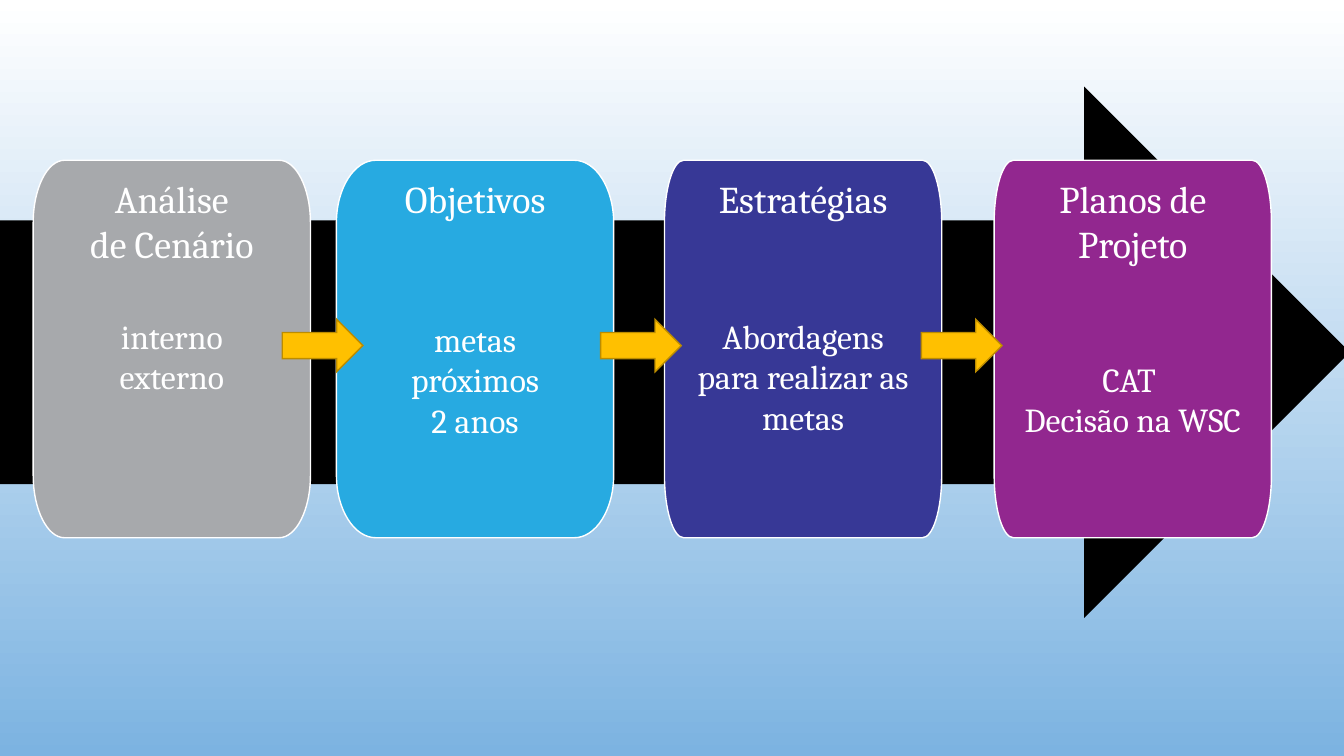
from copy import deepcopy

from lxml.etree import SubElement
from pptx import Presentation
from pptx.dml.color import RGBColor
from pptx.enum.shapes import MSO_SHAPE as Shape
from pptx.enum.text import MSO_ANCHOR as Anchor, PP_ALIGN as Align
from pptx.oxml.ns import qn
from pptx.util import Inches, Pt

WIDE, HIGH = Inches(13.33), Inches(7.5)
FONT = "Cambria"
SKY = ("FFFFFF", "7CB3E1")

CARDS = [
    dict(left=2.47, bend=2.33, fill="A7A9AC", gap=35.5,
         head=["Análise", "de Cenário"], body=["interno", "externo"]),
    dict(left=25.03, bend=2.93, fill="27AAE1", gap=70,
         head=["Objetivos"], body=["metas", "próximos", "2 anos"]),
    dict(left=49.44, bend=1.43, fill="373896", gap=68,
         head=["Estratégias"], body=["Abordagens", "para realizar as metas"]),
    dict(left=73.97, bend=1.43, fill="92278F", gap=66,
         head=["Planos de Projeto"], body=["CAT ", "Decisão na WSC"]),
]
CARD_TOP, CARD_W, CARD_H, BEND_H = 21.2, 20.63, 49.93, 8.27
BAND = (0.3, 12.8, 99.7, 67.6)
STEPS = [(left, 42.25, 6, 6.93) for left in (21, 44.69, 68.55)]
ROUND = 0.55


def tint(code):
    """Turn a hex string into a colour."""
    return RGBColor.from_string(code)


def across(part):
    """Return a share of the slide's width."""
    return round(WIDE * part / 100)


def down(part):
    """Return a share of the slide's height."""
    return round(HIGH * part / 100)


def paint(shape, fill, line, width):
    """Set the fill and sharp-cornered outline of a shape."""
    shape.shadow.inherit = False
    shape.fill.solid()
    shape.fill.fore_color.rgb = tint(fill)
    shape.line.color.rgb = tint(line)
    shape.line.width = Pt(width)
    edge = shape._element.spPr.find(qn("a:ln"))
    SubElement(edge, qn("a:miter"), lim="800000")


def arrow(slide, box, fill, line, width):
    """Draw a block arrow pointing right."""
    left, top, wide, high = box
    shape = slide.shapes.add_shape(
        Shape.RIGHT_ARROW, across(left), down(top), across(wide), down(high))
    shape.adjustments[0] = shape.adjustments[1] = 0.5
    paint(shape, fill, line, width)


def write(para, text, size, color="FFFFFF", before=0):
    """Fill a centred paragraph with formatted text."""
    para.alignment = Align.CENTER
    para.space_before = Pt(before)
    run = para.add_run()
    run.text = text
    run.font.name = FONT
    run.font.size = Pt(size)
    run.font.color.rgb = tint(color)


def outline(left, bend):
    """List the eight points where the sides of a card end."""
    right, base = left + CARD_W, CARD_TOP + CARD_H
    high, low = CARD_TOP + BEND_H, base - BEND_H
    spots = [(left, high), (left + bend, CARD_TOP),
             (right - bend, CARD_TOP), (right, high),
             (right, low), (right - bend, base),
             (left + bend, base), (left, low)]
    return [(across(x), down(y)) for x, y in spots]


def soften(shape):
    """Turn every second segment of an outline into a curved corner."""
    spots = list(shape._element.iter(qn("a:pt")))
    for i in range(0, 8, 2):
        pair = spots[i], spots[i + 1]
        side, edge = pair if i % 4 == 0 else pair[::-1]
        peak = {"x": int(side.get("x")), "y": int(edge.get("y"))}
        curve = pair[1].getparent()
        curve.tag = qn("a:cubicBezTo")
        for spot in pair:
            pull = deepcopy(spot)
            for axis, goal in peak.items():
                start = int(spot.get(axis))
                pull.set(axis, str(round(start + ROUND * (goal - start))))
            pair[1].addprevious(pull)


def card(slide, left, bend, fill, gap, head, body):
    """Draw a card with its heading and details."""
    points = outline(left, bend)
    pen = slide.shapes.build_freeform(*points[0])
    pen.add_line_segments(points[1:] + points[:1], close=True)
    shape = pen.convert_to_shape()
    soften(shape)
    paint(shape, fill, "FFFFFF", 1)
    frame = shape.text_frame
    frame.word_wrap = True
    frame.vertical_anchor = Anchor.TOP
    frame.margin_left = frame.margin_right = Inches(0.15)
    frame.margin_top = frame.margin_bottom = Inches(0.15)
    rows = [(text, 27, 0) for text in head]
    rows += [(text, 24, 0 if i else gap) for i, text in enumerate(body)]
    for i, (text, size, before) in enumerate(rows):
        para = frame.add_paragraph() if i else frame.paragraphs[0]
        write(para, text, size, before=before)


def main():
    """Build and save the slide."""
    deck = Presentation()
    deck.slide_width, deck.slide_height = WIDE, HIGH
    slide = deck.slides.add_slide(deck.slide_layouts[6])
    back = slide.background.fill
    back.gradient()
    back.gradient_angle = 270
    for stop, code in zip(back.gradient_stops, SKY):
        stop.color.rgb = tint(code)
    arrow(slide, BAND, "000000", "000000", 6)
    for item in CARDS:
        card(slide, **item)
    for box in STEPS:
        arrow(slide, box, "FFC000", "BC8C00", 1)
    deck.save("out.pptx")


if __name__ == "__main__":
    main()
